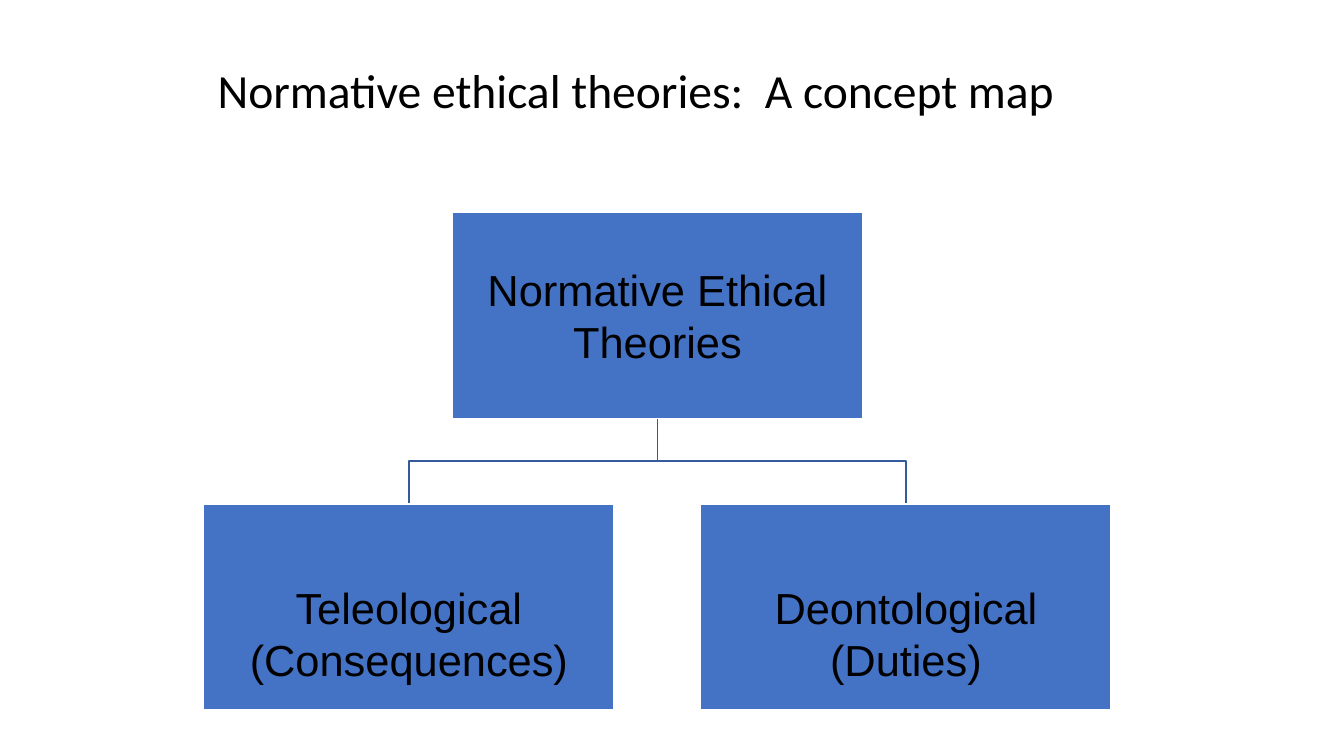
from pptx import Presentation
from pptx.dml.color import RGBColor
from pptx.enum.shapes import MSO_SHAPE
from pptx.enum.text import MSO_ANCHOR, PP_ALIGN
from pptx.util import Inches, Pt

RECTANGLE = MSO_SHAPE.RECTANGLE
MIDDLE = MSO_ANCHOR.MIDDLE
CENTER = PP_ALIGN.CENTER

TITLE = "Normative ethical theories:  A concept map"
ROOT = ["Normative Ethical Theories"]
BRANCHES = [
    ["Teleological", "(Consequences)"],
    ["Deontological", "(Duties)"],
]

COLORS = {"text": "000000", "box": "4472C4", "edge": "FFFFFF", "link": "365B9D"}

BOX_WIDTH, BOX_HEIGHT = 4.07, 2.04
ROOT_TOP, BRANCH_TOP = 2.11, 5.0
MAP_CENTER = 6.52
BRANCH_STEP = 4.93
INSET = 0.02
BRANCH_TEXT_DROP = 0.52


def color(name):
    return RGBColor.from_string(COLORS[name])


def style_text(para, font_name, size):
    for span in para.runs:
        span.font.name = font_name
        span.font.size = Pt(size)
        span.font.color.rgb = color("text")


def add_title(page):
    box = page.shapes.add_textbox(Inches(2.06), Inches(0.3), Inches(10.61), Inches(1.25))
    frame = box.text_frame
    frame.word_wrap = True
    frame.vertical_anchor = MIDDLE
    frame.text = TITLE
    para = frame.paragraphs[0]
    para.line_spacing = 0.9
    style_text(para, "Calibri", 34)


def add_link(page, branch_center):
    """Draw a right-angled line from the root box down to one branch."""
    root_bottom = ROOT_TOP + BOX_HEIGHT
    bend = (root_bottom + BRANCH_TOP) / 2
    corners = [(MAP_CENTER, bend), (branch_center, bend), (branch_center, BRANCH_TOP)]
    builder = page.shapes.build_freeform(Inches(MAP_CENTER), Inches(root_bottom))
    builder.add_line_segments([(Inches(x), Inches(y)) for x, y in corners], close=False)
    link = builder.convert_to_shape()
    link.shadow.inherit = False
    link.fill.background()
    link.line.color.rgb = color("link")
    link.line.width = Pt(1)


def add_theory(page, lines, center, top, text_drop=0):
    """Add a box whose text area starts text_drop inches lower."""
    box = page.shapes.add_shape(
        RECTANGLE, Inches(center - BOX_WIDTH / 2), Inches(top),
        Inches(BOX_WIDTH), Inches(BOX_HEIGHT))
    box.shadow.inherit = False
    box.fill.solid()
    box.fill.fore_color.rgb = color("box")
    box.line.color.rgb = color("edge")
    box.line.width = Pt(1)
    frame = box.text_frame
    frame.word_wrap = True
    frame.vertical_anchor = MIDDLE
    frame.margin_left = frame.margin_right = frame.margin_bottom = Inches(INSET)
    frame.margin_top = Inches(INSET + text_drop)
    frame.text = "\n".join(lines)
    for para in frame.paragraphs:
        para.alignment = CENTER
        style_text(para, "Arial", 31)


def main():
    deck = Presentation()
    deck.slide_width, deck.slide_height = Inches(13.33), Inches(7.5)
    page = deck.slides.add_slide(deck.slide_layouts[6])
    add_title(page)
    first_center = MAP_CENTER - BRANCH_STEP * (len(BRANCHES) - 1) / 2
    centers = [first_center + BRANCH_STEP * i for i in range(len(BRANCHES))]
    for center in centers:
        add_link(page, center)
    add_theory(page, ROOT, MAP_CENTER, ROOT_TOP)
    for lines, center in zip(BRANCHES, centers):
        add_theory(page, lines, center, BRANCH_TOP, BRANCH_TEXT_DROP)
    deck.save("out.pptx")


if __name__ == "__main__":
    main()
